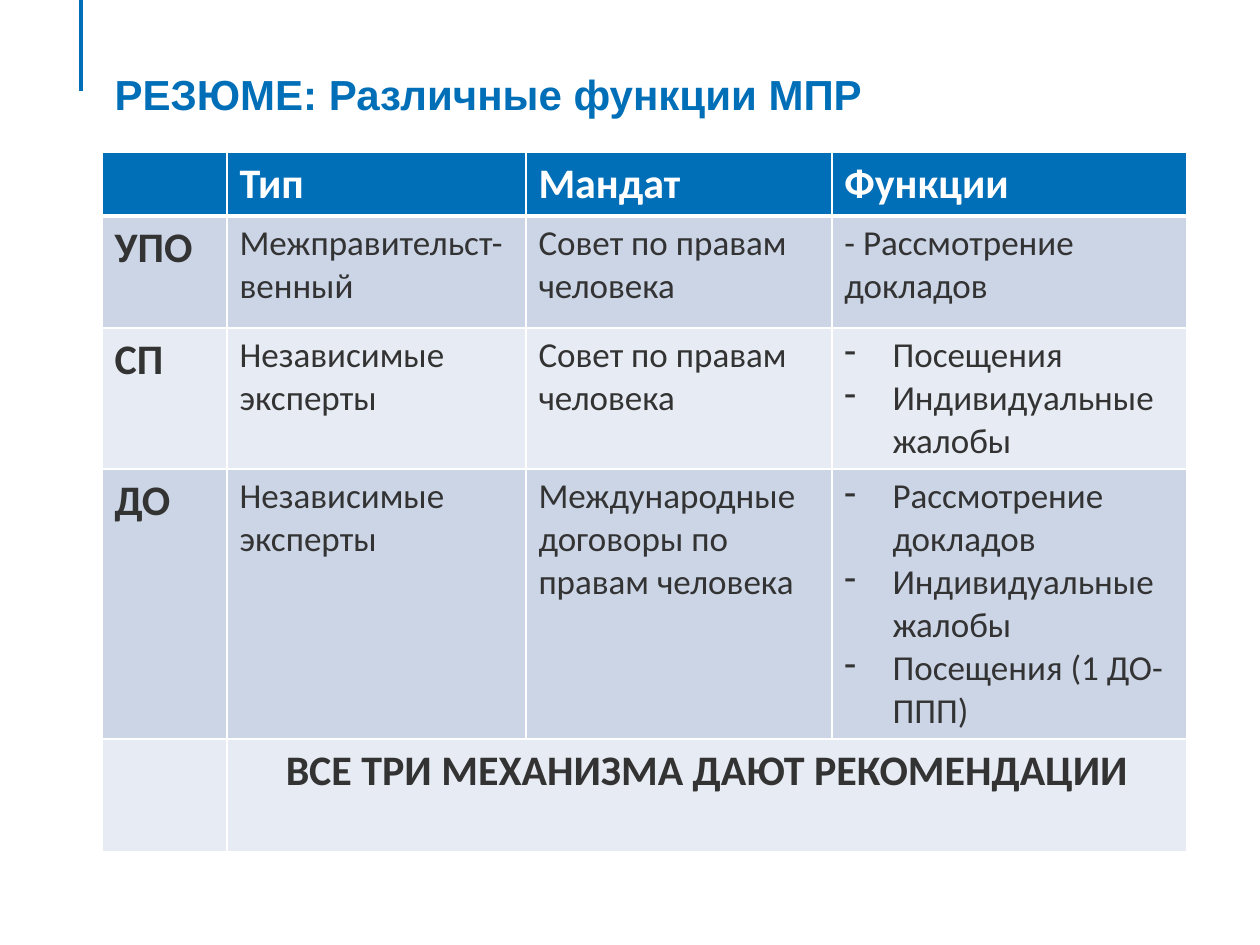
from pptx import Presentation
from pptx.dml.color import RGBColor
from pptx.enum.shapes import MSO_CONNECTOR
from pptx.enum.text import MSO_ANCHOR, PP_ALIGN
from pptx.oxml.ns import qn
from pptx.util import Pt
from lxml.etree import SubElement

PX = 914400 // 126
BLUE = RGBColor(0x00, 0x6F, 0xB7)
DARK = RGBColor(0x33, 0x33, 0x33)
WHITE = RGBColor(0xFF, 0xFF, 0xFF)
BANDS = [RGBColor(0xE7, 0xEB, 0xF3), RGBColor(0xCB, 0xD5, 0xE6)]

TITLE = "РЕЗЮМЕ: Различные функции МПР"
# A list in a cell becomes a dashed list
ROWS = [
    ["", "Тип", "Мандат", "Функции"],
    ["УПО", "Межправительст-венный", "Совет по правам человека", "- Рассмотрение докладов"],
    ["СП", "Независимые эксперты", "Совет по правам человека",
     ["Посещения", "Индивидуальные жалобы"]],
    ["ДО", "Независимые эксперты", "Международные договоры по правам человека",
     ["Рассмотрение докладов", "Индивидуальные жалобы", "Посещения (1 ДО-ППП)"]],
    ["", "ВСЕ ТРИ МЕХАНИЗМА ДАЮТ РЕКОМЕНДАЦИИ", "", ""],
]
COL_WIDTHS = [125, 299, 306, 355]
ROW_HEIGHTS = [63, 112, 141, 270, 113]
LAST = len(ROWS) - 1


def px(*lengths):
    return [n * PX for n in lengths]


def set_borders(cell, **widths):
    tcPr = cell._tc.get_or_add_tcPr()
    for side in "LRTB":
        ln = SubElement(tcPr, qn(f"a:ln{side}"), w=str(Pt(widths.get(side, 1))))
        fill = SubElement(ln, qn("a:solidFill"))
        SubElement(fill, qn("a:srgbClr"), val=str(WHITE))


def add_dash(p):
    pPr = p._p.get_or_add_pPr()
    pPr.set("marL", str(48 * PX))
    pPr.set("indent", str(-48 * PX))
    SubElement(pPr, qn("a:buChar"), char="-")


def fill_cell(cell, content, row, col):
    set_borders(cell, **{0: {"B": 3}, 1: {"T": 3}}.get(row, {}))
    cell.fill.solid()
    cell.fill.fore_color.rgb = BANDS[row % 2] if row else BLUE
    strong = row in (0, LAST) or col == 0
    is_list = isinstance(content, list)
    cell.text_frame.text = "\n".join(content) if is_list else content
    for p in cell.text_frame.paragraphs:
        if is_list:
            add_dash(p)
        if row == LAST:
            p.alignment = PP_ALIGN.CENTER
        for r in p.runs:
            r.font.name = "Calibri"
            r.font.size = Pt(24 if strong else 20)
            r.font.bold = strong
            r.font.color.rgb = DARK if row else WHITE


def add_title(slide):
    s = slide.shapes.title
    s.left, s.top, s.width, s.height = px(102, 57, 1042, 87)
    tf = s.text_frame
    tf.text = TITLE
    tf.vertical_anchor = MSO_ANCHOR.TOP
    tf.margin_top = 11 * PX
    p = tf.paragraphs[0]
    p.alignment = PP_ALIGN.LEFT
    font = p.runs[0].font
    font.name, font.size, font.bold = "Arial", Pt(24), True
    font.color.rgb = BLUE


def add_accent_line(slide):
    line = slide.shapes.add_connector(MSO_CONNECTOR.STRAIGHT, *px(81, 0, 81, 91))
    line.line.color.rgb = BLUE
    line.line.width = Pt(2)
    SubElement(line._element.spPr, qn("a:effectLst"))


def add_summary_table(slide):
    frame = slide.shapes.add_table(
        len(ROWS), len(COL_WIDTHS), *px(102, 152, sum(COL_WIDTHS), sum(ROW_HEIGHTS)))
    table = frame.table
    for column, width in zip(table.columns, COL_WIDTHS):
        column.width = width * PX
    for row, height in zip(table.rows, ROW_HEIGHTS):
        row.height = height * PX
    for i, contents in enumerate(ROWS):
        for j, content in enumerate(contents):
            fill_cell(table.cell(i, j), content, i, j)
    table.cell(LAST, 1).merge(table.cell(LAST, 3))


def main():
    prs = Presentation()
    prs.slide_width, prs.slide_height = px(1260, 945)
    slide = prs.slides.add_slide(prs.slide_layouts[5])
    add_accent_line(slide)
    add_title(slide)
    add_summary_table(slide)
    prs.save("out.pptx")


if __name__ == "__main__":
    main()
